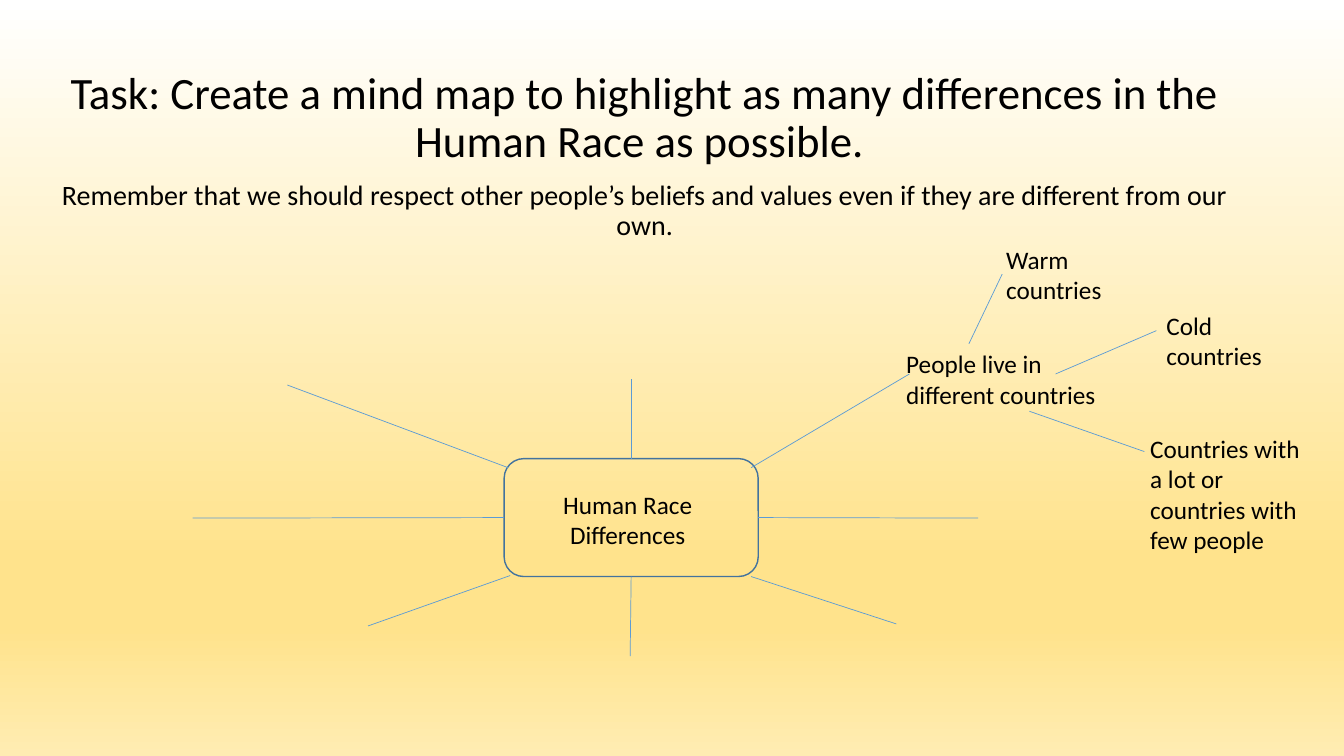
from copy import deepcopy

from lxml.etree import SubElement
from pptx import Presentation
from pptx.dml.color import RGBColor
from pptx.enum.shapes import MSO_CONNECTOR, MSO_SHAPE
from pptx.enum.text import MSO_AUTO_SIZE, PP_ALIGN
from pptx.oxml.ns import qn
from pptx.util import Inches, Pt

FONT = "Calibri"
COLORS = {
    "text": "000000",
    "outline": "43739E",
    "branch": "5B9BD5",
    "white": "FFFFFF",
    "gold": "FFE38C",
    "cream": "FFECB2",
}
BACKGROUND_STOPS = [(0, "white"), (0.74, "gold"), (0.83, "gold"), (1, "cream")]
HEADING = [
    ("Task: Create a mind map to highlight as many differences in the "
     "Human Race as possible. ", 32),
    ("Remember that we should respect other people’s beliefs and values "
     "even if they are different from our own.", 20),
]
TOPIC_BOX = (5, 4.55, 2.52, 1.17)
TOPIC_LABEL = ("Human Race Differences", 5.13, 4.8, 2.19, 0.71)
IDEAS = [
    ("People live in different countries", 8.89, 3.41, 2.1, 0.71),
    ("Warm countries", 9.88, 2.37, 1.59, 0.71),
    ("Cold countries", 11.47, 3.03, 1.65, 0.71),
    ("Countries with a lot or countries with few people", 11.31, 4.25, 1.81, 1.31),
]
SIDE_BRANCHES = [
    (0, (6.26, 4.55), (6.26, 3.76)),
    (1, (5, 5.14), (1.91, 5.14)),
    (2, (6.26, 5.72), (6.25, 6.51)),
    (3, (7.52, 5.14), (9.7, 5.14)),
]
FREE_BRANCHES = [
    ((7.45, 4.64), (9.02, 3.71)),
    ((5.04, 4.64), (2.85, 3.82)),
    ((7.45, 5.72), (8.89, 6.19)),
    ((5.06, 5.71), (3.65, 6.21)),
    ((9.61, 3.41), (9.94, 2.72)),
    ((10.47, 3.71), (11.47, 3.28)),
    ((10.21, 4.08), (11.35, 4.48)),
]


def color(name):
    """Return the named colour."""
    return RGBColor.from_string(COLORS[name])


def paint_background(slide):
    """Fill the slide with a gradient running from top to bottom."""
    fill = slide.background.fill
    fill.gradient()
    fill.gradient_angle = 270
    stop_list = slide.element.find(".//" + qn("a:gsLst"))
    for _ in range(len(BACKGROUND_STOPS) - len(stop_list)):
        stop_list.append(deepcopy(stop_list[0]))
    for stop, (position, name) in zip(fill.gradient_stops, BACKGROUND_STOPS):
        stop.position = position
        stop.color.rgb = color(name)


def add_text_box(slide, left, top, width, height):
    """Add an empty wrapping text box and return its text frame."""
    box = slide.shapes.add_textbox(*map(Inches, (left, top, width, height)))
    box.text_frame.word_wrap = True
    return box.text_frame


def write(paragraph, text, size, alignment):
    """Set and format the text of a paragraph."""
    paragraph.text = text
    paragraph.alignment = alignment
    for run in paragraph.runs:
        run.font.name = FONT
        run.font.size = Pt(size)
        run.font.color.rgb = color("text")


def add_heading(slide):
    """Add the task and the reminder below it."""
    frame = add_text_box(slide, 0.41, 0.65, 11.97, 1.38)
    for index, (text, size) in enumerate(HEADING):
        paragraph = frame.add_paragraph() if index else frame.paragraphs[0]
        write(paragraph, text, size, PP_ALIGN.CENTER)
        paragraph.line_spacing = 0.9
        paragraph.space_before = Pt(10)


def add_label(slide, text, left, top, width, height, alignment=PP_ALIGN.LEFT):
    """Add a label of the mind map."""
    frame = add_text_box(slide, left, top, width, height)
    frame.auto_size = MSO_AUTO_SIZE.SHAPE_TO_FIT_TEXT
    write(frame.paragraphs[0], text, 18, alignment)


def add_topic_box(slide):
    """Add the outlined box in the middle of the mind map."""
    shape = slide.shapes.add_shape(
        MSO_SHAPE.ROUNDED_RECTANGLE, *map(Inches, TOPIC_BOX))
    shape.shadow.inherit = False
    shape.fill.background()
    shape.line.color.rgb = color("outline")
    shape.line.width = Pt(1)
    return shape


def add_branch(slide, start, end):
    """Add a thin straight line between two points."""
    branch = slide.shapes.add_connector(
        MSO_CONNECTOR.STRAIGHT, *map(Inches, (*start, *end)))
    branch.line.color.rgb = color("branch")
    branch.line.width = Pt(0.5)
    SubElement(branch.element.spPr, qn("a:effectLst"))
    return branch


def main():
    """Build and save the mind map slide."""
    presentation = Presentation()
    presentation.slide_width = Inches(13.33)
    presentation.slide_height = Inches(7.5)
    slide = presentation.slides.add_slide(presentation.slide_layouts[6])
    paint_background(slide)
    add_heading(slide)
    topic_box = add_topic_box(slide)
    add_label(slide, *TOPIC_LABEL, alignment=PP_ALIGN.CENTER)
    for side, start, end in SIDE_BRANCHES:
        add_branch(slide, start, end).begin_connect(topic_box, side)
    for start, end in FREE_BRANCHES:
        add_branch(slide, start, end)
    for idea in IDEAS:
        add_label(slide, *idea)
    presentation.save("out.pptx")


if __name__ == "__main__":
    main()
